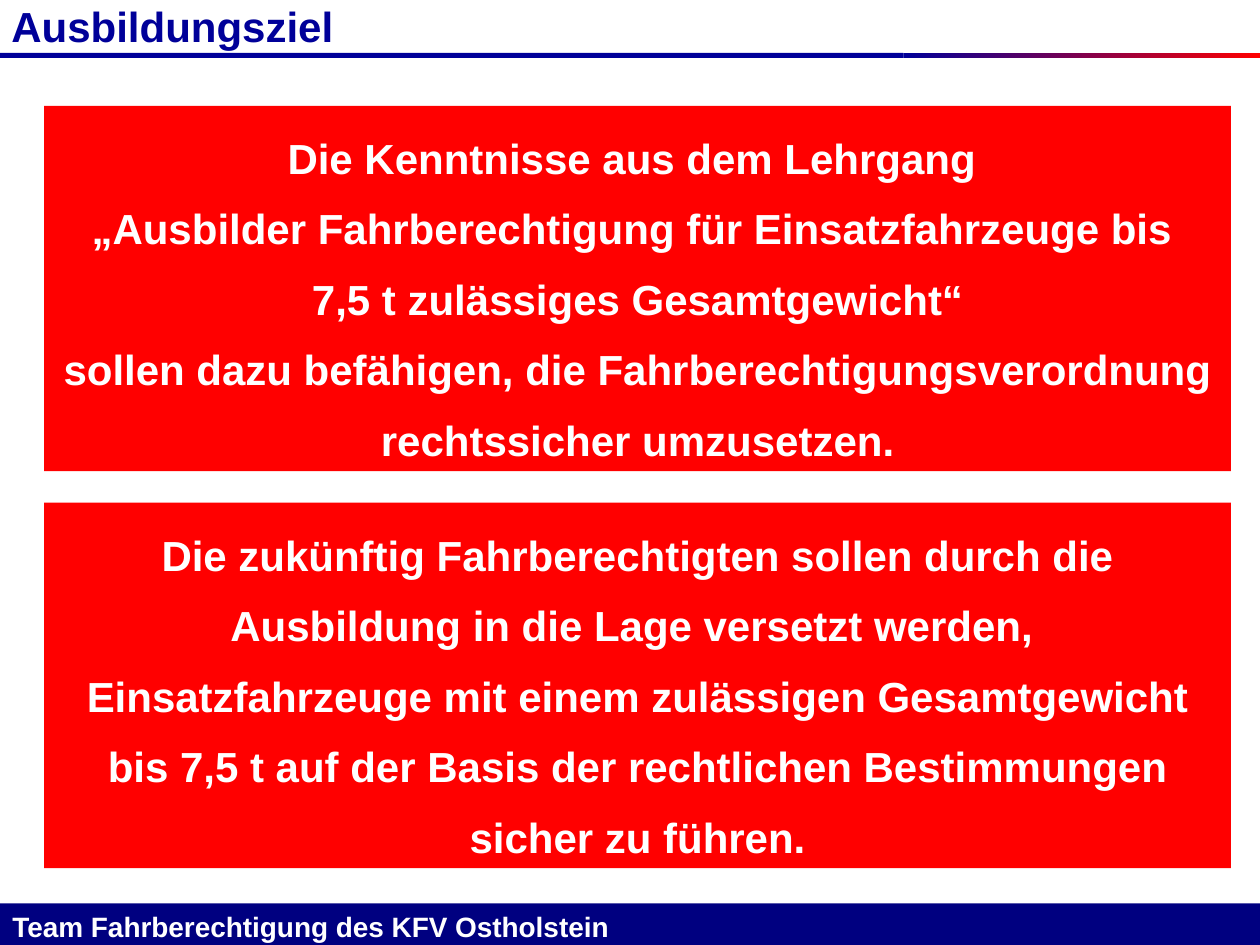
from pptx import Presentation
from pptx.dml.color import RGBColor
from pptx.enum.shapes import MSO_SHAPE
from pptx.enum.text import MSO_ANCHOR, MSO_AUTO_SIZE, PP_ALIGN
from pptx.util import Inches, Pt

THEME = {
    "font": "Arial",
    "blue": RGBColor(0x00, 0x00, 0x99),
    "navy": RGBColor(0x00, 0x00, 0x80),
    "red": RGBColor(0xFF, 0x00, 0x00),
    "white": RGBColor(0xFF, 0xFF, 0xFF),
    "large": Pt(24),
    "small": Pt(16),
}


def add_box(left, top, width, height, color):
    box = slide.shapes.add_shape(
        MSO_SHAPE.RECTANGLE,
        Inches(left), Inches(top), Inches(width), Inches(height))
    box.shadow.inherit = False
    box.fill.solid()
    box.fill.fore_color.rgb = THEME[color]
    box.line.fill.background()
    return box


def write(shape, text, size, color, align, frame_format):
    frame = shape.text_frame
    for name, value in frame_format.items():
        setattr(frame, name, value)
    para = frame.paragraphs[0]
    para.text = text
    para.alignment = align
    para.space_before = Pt(0)
    font_format = {"name": THEME["font"], "size": THEME[size], "bold": True}
    for name, value in font_format.items():
        setattr(para.font, name, value)
    para.font.color.rgb = THEME[color]
    return para


deck = Presentation()
deck.slide_width, deck.slide_height = Inches(10), Inches(7.5)
slide = deck.slides.add_slide(deck.slide_layouts[5])

# Title
title = slide.shapes.title
title.left, title.top = Inches(0), Inches(0)
title.width, title.height = Inches(10), Inches(0.41)
write(title, "Ausbildungsziel", "large", "blue", PP_ALIGN.LEFT, {
    "margin_left": Inches(0.09), "margin_right": 0,
    "margin_top": 0, "margin_bottom": 0,
    "vertical_anchor": MSO_ANCHOR.MIDDLE, "auto_size": MSO_AUTO_SIZE.NONE})

# Rule below the title, fading from blue to red
add_box(0, 0.42, 7.17, 0.04, "blue")
fade = add_box(7.17, 0.42, 2.83, 0.04, "red")
fade.fill.gradient()
fade.fill.gradient_angle = 0
for stop, color, place in zip(fade.fill.gradient_stops, ("blue", "red"), (0, 1)):
    stop.color.rgb = THEME[color]
    stop.position = place

# Footer
footer = add_box(0, 7.17, 10, 0.33, "navy")
write(footer, "Team Fahrberechtigung des KFV Ostholstein", "small", "white",
      PP_ALIGN.LEFT, {"word_wrap": True, "vertical_anchor": MSO_ANCHOR.TOP})

# Training goals
goals = [
    "Die Kenntnisse aus dem Lehrgang \v"
    "„Ausbilder Fahrberechtigung für Einsatzfahrzeuge bis \v"
    "7,5 t zulässiges Gesamtgewicht“\v"
    "sollen dazu befähigen, die Fahrberechtigungsverordnung "
    "rechtssicher umzusetzen.",
    "Die zukünftig Fahrberechtigten sollen durch die "
    "Ausbildung in die Lage versetzt werden, \v"
    "Einsatzfahrzeuge mit einem zulässigen Gesamtgewicht "
    "bis 7,5 t auf der Basis der rechtlichen Bestimmungen "
    "sicher zu führen.",
]
for row, goal in enumerate(goals):
    box = add_box(0.35, 0.84 + row * 3.15, 9.42, 2.9, "red")
    para = write(box, goal, "large", "white", PP_ALIGN.CENTER, {
        "word_wrap": True, "vertical_anchor": MSO_ANCHOR.TOP,
        "auto_size": MSO_AUTO_SIZE.SHAPE_TO_FIT_TEXT})
    para.line_spacing = 1.4

deck.save("out.pptx")
